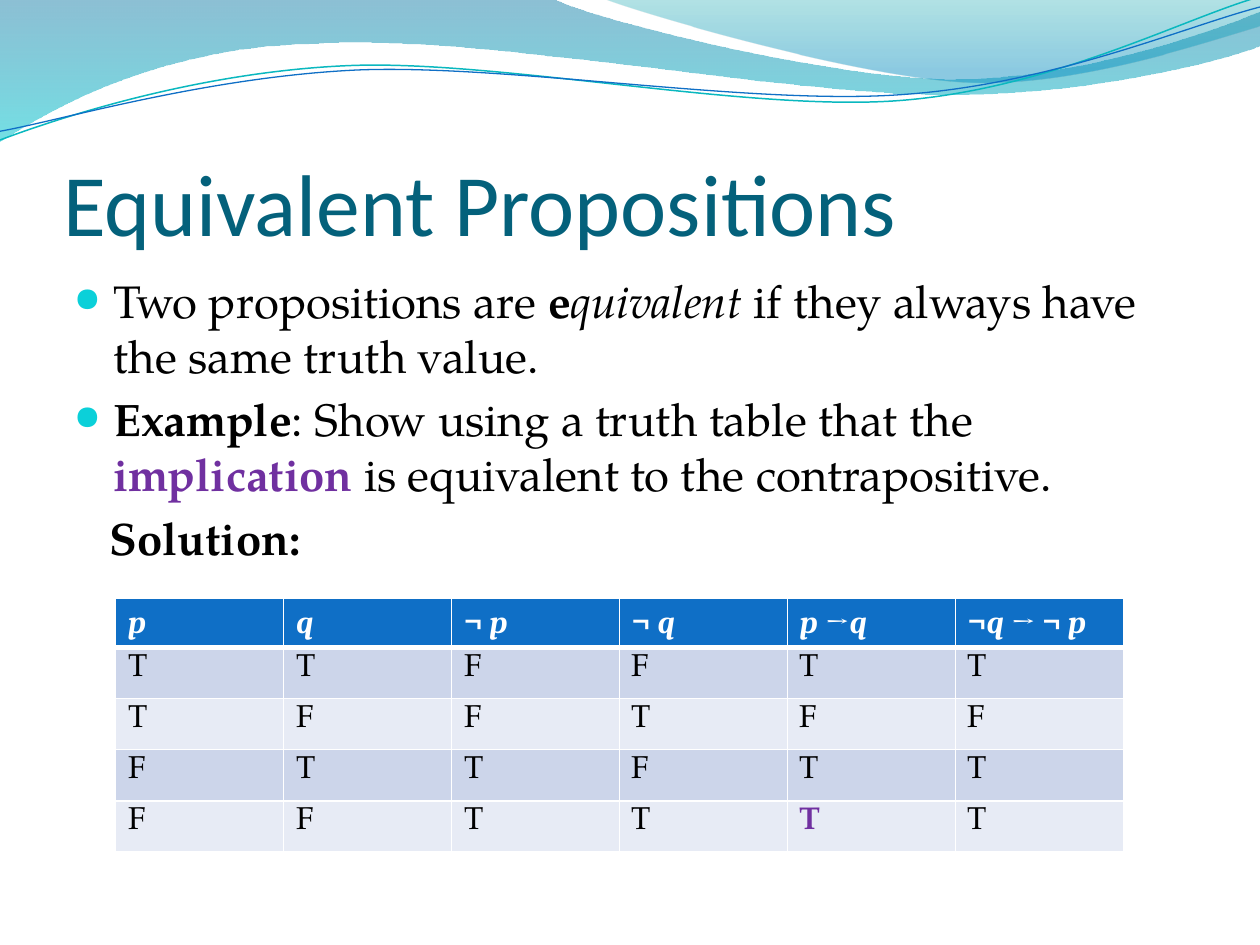
from dataclasses import dataclass
from itertools import chain, groupby

from lxml import etree
from pptx import Presentation
from pptx.dml.color import RGBColor
from pptx.enum.text import MSO_ANCHOR, MSO_AUTO_SIZE, PP_ALIGN
from pptx.oxml.ns import qn
from pptx.util import Pt

LEFT = PP_ALIGN.LEFT
TOP, BOTTOM = MSO_ANCHOR.TOP, MSO_ANCHOR.BOTTOM
NO_FIT = MSO_AUTO_SIZE.NONE

SERIF, HEAD_FONT, TITLE_FONT = "TeX Gyre Pagella", "Cambria", "Calibri"
BLACK, WHITE, PURPLE, BLUE = "000000", "FFFFFF", "7030A0", "0F6FC6"
BANDS = ("CCD5EA", "E7EBF5")


@dataclass
class Wave:
    """Each segment is one point for a straight line, three for a cubic curve."""
    start: tuple
    segments: list
    stops: tuple = ()  # (position, colour, alpha percent)
    line: tuple = ()  # (colour, width)


@dataclass
class Run:
    text: str
    bold: bool = False
    italic: bool = False
    color: str = BLACK


@dataclass
class Item:
    runs: list
    bullet: bool = True


WAVES = [
    Wave((-0.5, 81), [[(0, 0)], [(317, -0.5)], [(343, 12), (478, 45), (546, 45)],
                      [(614, 45), (690, 19), (720, 6.5)], [(720.5, 26)],
                      [(708, 32), (626, 55), (537, 54)], [(448, 54), (275, 20), (185, 24.5)],
                      [(93, 26), (33, 60), (-0.5, 81)]],
         stops=((0, "0074A1", 45), (1, "00C6CF", 55))),
    Wave((345, -0.5), [[(366, 8), (491, 44.5), (554, 47)], [(616, 49.5), (692, 23), (720, 15)],
                       [(720, 0)]],
         stops=((0, "00A1A9", 30), (0.8, "008BBF", 45))),
    Wave((0, 80), [[(34.5, 67), (114, 41), (199.5, 37.5)], [(284.5, 34), (427, 64), (513.5, 57.5)],
                   [(600, 51), (675.5, 11), (718.5, -1.5)]], line=("0AB8BF", 0.85)),
    Wave((0, 75), [[(34, 69), (118, 44), (204, 40)], [(290, 36.5), (430, 60.5), (516, 54)],
                   [(602, 48), (677.5, 15), (720, 4)]], line=(BLUE, 0.75)),
]

ITEMS = [
    Item([Run("Two propositions are "), Run("e", bold=True), Run("quivalent ", italic=True),
          Run("if they always have the same truth value.")]),
    Item([Run("Example", bold=True), Run(": Show using a truth table that the "),
          Run("implication", bold=True, color=PURPLE),
          Run(" is equivalent to the contrapositive.")]),
    Item([Run("Solution:", bold=True)], bullet=False),
]

HEADERS = ["p", "q", "¬ p", "¬ q", "p →q", "¬q → ¬ p"]
TRUTH = ["TTFFTT", "TFFTFF", "FTTFTT", "FFTTTT"]
HIGHLIGHT = (4, 4)  # row, column


def rgb(color: str) -> RGBColor:
    return RGBColor.from_string(color)


def add_run(p, text: str, *, size: float, font: str, color: str = BLACK,
            bold: bool = False, italic: bool = False) -> None:
    r = p.add_run()
    r.text = text
    f = r.font
    f.size, f.name, f.bold, f.italic = Pt(size), font, bold, italic
    f.color.rgb = rgb(color)


def bend(sp, segments: list) -> None:
    """Join the straight steps of each three-point segment into one curve."""
    steps = iter(list(sp._element.iter(qn("a:lnTo"))))
    for seg in segments:
        first, *rest = [next(steps) for _ in seg]
        if rest:
            first.tag = qn("a:cubicBezTo")
        for step in rest:
            first.append(step[0])
            step.getparent().remove(step)


def add_wave(s, wave: Wave) -> None:
    fb = s.shapes.build_freeform(Pt(wave.start[0]), Pt(wave.start[1]))
    fb.add_line_segments([(Pt(x), Pt(y)) for x, y in chain(*wave.segments)],
                         close=bool(wave.stops))
    sp = fb.convert_to_shape()
    bend(sp, wave.segments)
    sp.shadow.inherit = False
    if wave.line:
        sp.fill.background()
        sp.line.color.rgb = rgb(wave.line[0])
        sp.line.width = Pt(wave.line[1])
        return
    sp.line.fill.background()
    sp.fill.gradient()
    sp.fill.gradient_angle = 270
    for stop, (position, color, _) in zip(sp.fill.gradient_stops, wave.stops):
        stop.position = position
        stop.color.rgb = rgb(color)
    colors = sp._element.spPr.iter(qn("a:srgbClr"))
    for node, (_, _, alpha) in zip(colors, wave.stops):
        etree.SubElement(node, qn("a:alpha"), val=str(alpha * 1000))


def place(sp, left: float, top: float, width: float, height: float):
    sp.left, sp.top, sp.width, sp.height = Pt(left), Pt(top), Pt(width), Pt(height)
    tf = sp.text_frame
    tf.word_wrap, tf.auto_size = True, NO_FIT
    return tf


def set_bullet(p, item: Item) -> None:
    pPr = p._p.get_or_add_pPr()
    if not item.bullet:
        pPr.set("marL", str(Pt(19.5)))
        pPr.set("indent", "0")
        etree.SubElement(pPr, qn("a:buNone"))
        return
    pPr.set("marL", str(Pt(21.6)))
    pPr.set("indent", str(-Pt(21.6)))
    color = etree.SubElement(pPr, qn("a:buClr"))
    etree.SubElement(color, qn("a:srgbClr"), val="0BD0D9")
    etree.SubElement(pPr, qn("a:buSzPct"), val="68000")
    etree.SubElement(pPr, qn("a:buFont"), typeface=SERIF)
    etree.SubElement(pPr, qn("a:buChar"), char="●")


def style_cell(cell, fill: str, top: float, bottom: float) -> None:
    tcPr = cell._tc.get_or_add_tcPr()
    for side, width in (("L", 1), ("R", 1), ("T", top), ("B", bottom)):
        ln = etree.SubElement(tcPr, qn(f"a:ln{side}"), w=str(Pt(width)))
        solid = etree.SubElement(ln, qn("a:solidFill"))
        etree.SubElement(solid, qn("a:srgbClr"), val=WHITE)
    cell.fill.solid()
    cell.fill.fore_color.rgb = rgb(fill)
    cell.vertical_anchor = TOP


def add_truth_table(s) -> None:
    rows, cols = len(TRUTH) + 1, len(HEADERS)
    tbl = s.shapes.add_table(rows, cols, Pt(66), Pt(342), Pt(576), Pt(144.8)).table
    for col in tbl.columns:
        col.width = Pt(576 / cols)
    for i, row in enumerate(tbl.rows):
        row.height = Pt(29.2 if i else 28)
    for j, header in enumerate(HEADERS):
        cell = tbl.cell(0, j)
        style_cell(cell, BLUE, 1, 3)
        # Variables are italic, operators upright
        for variable, chars in groupby(header, lambda char: char in "pq"):
            add_run(cell.text_frame.paragraphs[0], "".join(chars), size=18, font=HEAD_FONT,
                    color=WHITE, bold=True, italic=variable)
    for i, values in enumerate(TRUTH, 1):
        for j, value in enumerate(values):
            cell = tbl.cell(i, j)
            style_cell(cell, BANDS[(i - 1) % 2], 3 if i == 1 else 1, 1)
            marked = (i, j) == HIGHLIGHT
            add_run(cell.text_frame.paragraphs[0], value, size=18, font=SERIF,
                    color=PURPLE if marked else BLACK, bold=marked)


def main() -> None:
    prs = Presentation()
    prs.slide_width, prs.slide_height = Pt(720), Pt(540)
    s = prs.slides.add_slide(prs.slide_layouts[1])
    title, body = s.placeholders

    # Header waves, behind the text
    for wave in WAVES:
        add_wave(s, wave)
    for sp in (title, body):
        s.shapes._spTree.append(sp._element)

    # Title
    tf = place(title, 36, 55.2, 648, 90)
    tf.vertical_anchor = BOTTOM
    tf.margin_left = tf.margin_right = tf.margin_bottom = 0
    tf.paragraphs[0].alignment = LEFT
    add_run(tf.paragraphs[0], "Equivalent Propositions", size=50, font=TITLE_FONT, color="04617B")

    # Definition and example
    tf = place(body, 36, 152.5, 648, 345.5)
    for i, item in enumerate(ITEMS):
        p = tf.add_paragraph() if i else tf.paragraphs[0]
        p.space_before = Pt(5.2)
        set_bullet(p, item)
        for run in item.runs:
            add_run(p, run.text, size=26, font=SERIF, color=run.color,
                    bold=run.bold, italic=run.italic)

    add_truth_table(s)
    prs.save("out.pptx")


if __name__ == "__main__":
    main()
